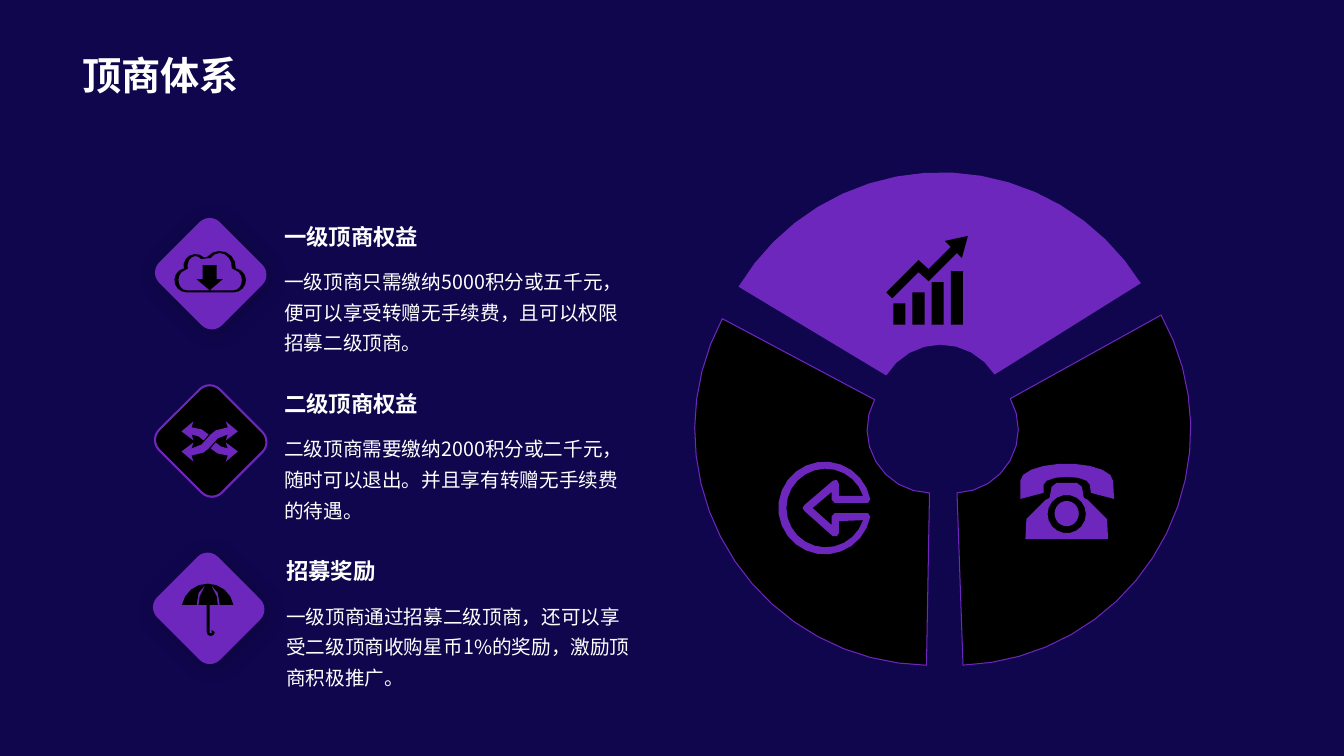
"""Build the slide on the three-part merchant system."""
from math import cos, radians, sin

from lxml.etree import SubElement
from pptx import Presentation
from pptx.dml.color import RGBColor
from pptx.enum.shapes import MSO_SHAPE
from pptx.enum.text import MSO_ANCHOR, MSO_AUTO_SIZE
from pptx.oxml.ns import qn
from pptx.util import Inches, Pt

NAVY = RGBColor(0x10, 0x06, 0x4D)
PURPLE = RGBColor(0x6D, 0x27, 0xBD)
BLACK = RGBColor(0, 0, 0)
WHITE = RGBColor(255, 255, 255)
FONT = "Noto Sans CJK JP"

deck = Presentation()
deck.slide_width, deck.slide_height = Inches(13.33), Inches(7.5)
slide = deck.slides.add_slide(deck.slide_layouts[6])
slide.background.fill.solid()
slide.background.fill.fore_color.rgb = NAVY


def arc(x, y, rx, ry, start, end, stride=20):
    """Points along an ellipse, angles counter-clockwise from the right."""
    steps = max(2, round(abs(end - start) / stride))
    angles = [radians(start + (end - start) * i / steps) for i in range(steps + 1)]
    return [(x + rx * cos(a), y - ry * sin(a)) for a in angles]


def outline(contours, colour):
    """Filled freeform in which an inner contour is a hole."""
    builder = None
    for contour in contours:
        corners = [(Inches(x), Inches(y)) for x, y in contour]
        if builder is None:
            builder = slide.shapes.build_freeform(*corners[0])
        else:
            builder.move_to(*corners[0])
        builder.add_line_segments(corners[1:], close=True)
    drawn = builder.convert_to_shape()
    drawn.shadow.inherit = False
    drawn.fill.solid()
    drawn.fill.fore_color.rgb = colour
    drawn.line.fill.background()
    return drawn


OUTER, INNER = 2.34, 0.63
for x, y, start, end, colour in [
    (9.33, 4.05, 32, 149, PURPLE),
    (9.47, 4.26, -88, 29, BLACK),
    (9.23, 4.26, 152, 269, BLACK),
]:
    rim = arc(x, y, OUTER, OUTER, start, end, 7)
    hub = arc(x, y, INNER, INNER, end, start, 15)
    sector = outline([rim + hub], colour)
    if colour == BLACK:
        sector.line.color.rgb = PURPLE
        sector.line.width = Pt(0.75)

trend = [(9.54, 2.56), (9.6, 2.34), (9.37, 2.39), (9.43, 2.45), (9.21, 2.67), (9.11, 2.58),
         (8.79, 2.9), (8.85, 2.96), (9.11, 2.7), (9.21, 2.79), (9.49, 2.51)]
outline([trend], BLACK)
BASELINE, PHONE_X = 3.22, 10.58
handset = (arc(PHONE_X, 4.77, 0.46, 0.17, 0, 180)
           + [(10.12, 4.95), (10.35, 4.89)]
           + arc(PHONE_X, 4.81, 0.23, 0.08, 180, 0, 30)
           + [(10.82, 4.89), (11.05, 4.95)])
phone_left = [(10.17, 5.35), (10.18, 5.15), (10.37, 4.96),
              (10.41, 4.94), (10.43, 4.83), (10.48, 4.79)]
phone_right = [(2 * PHONE_X - x, y) for x, y in reversed(phone_left)]
outline([handset], PURPLE)
outline([phone_left + phone_right, arc(PHONE_X, 5.1, 0.19, 0.19, 0, 360)], PURPLE)

solids = [(MSO_SHAPE.RECTANGLE, 8.86 + i * 0.19, BASELINE - height, 0.12, height, BLACK)
          for i, height in enumerate([0.21, 0.32, 0.42, 0.53])]
solids.append((MSO_SHAPE.OVAL, 10.46, 4.97, 0.24, 0.25, PURPLE))
for preset, left, top, width, height, colour in solids:
    solid = slide.shapes.add_shape(
        preset, Inches(left), Inches(top), Inches(width), Inches(height))
    solid.shadow.inherit = False
    solid.fill.solid()
    solid.fill.fore_color.rgb = colour
    solid.line.fill.background()

ring_outside = arc(8.18, 5.04, 0.46, 0.46, 11, 349, 15) + [
    (8.61, 5.09), (8.28, 5.09), (8.25, 5.12), (8.25, 5.21), (8.06, 5.04),
    (8.25, 4.88), (8.25, 4.96), (8.28, 4.99), (8.61, 4.99)]
ring_inside = arc(8.19, 5.04, 0.39, 0.39, 18, 342, 15) + [
    (8.32, 5.17), (8.32, 5.29), (8.3, 5.32), (8.26, 5.32), (7.98, 5.07), (7.96, 5.04),
    (7.98, 5.01), (8.26, 4.77), (8.3, 4.76), (8.32, 4.8), (8.32, 4.92)]
outline([ring_outside, ring_inside], PURPLE)

cloud = []
lobes = [(1.85, 2.78, 0.12, 105, 270), (2.32, 2.78, 0.12, -90, 75),
         (2.18, 2.65, 0.16, -5, 140), (1.94, 2.64, 0.12, 45, 195)]
for inset in (0, 0.04):
    cloud.append([point for x, y, r, start, end in lobes
                  for point in arc(x, y, r - inset, r - inset / 2, start, end, 25)])
cloud.append([(2.01, 2.63), (2.15, 2.63), (2.15, 2.77), (2.21, 2.77),
              (2.08, 2.88), (1.95, 2.77), (2.01, 2.77)])

strand_half = [(1.9, 4.45), (2.0, 4.41), (2.09, 4.31), (2.14, 4.27),
               (2.26, 4.24), (2.24, 4.18), (2.36, 4.28), (2.24, 4.37), (2.26, 4.31)]
strand_end = [(1.9, 4.24), (2.0, 4.26), (2.07, 4.31), (2.02, 4.37), (1.97, 4.33),
              (1.9, 4.31), (1.92, 4.37), (1.8, 4.28), (1.92, 4.18)]
turned_half, turned_end = [[(4.16 - x, 8.76 - y) for x, y in piece]
                           for piece in (strand_half, strand_end)]
shuffle = [strand_half + turned_half, strand_end, turned_end]

slit = [(1.95, 6), (1.97, 5.88), (2.04, 5.8), (1.98, 5.92), (1.97, 6)]
umbrella = [arc(2.06, 6.05, 0.26, 0.26, 11, 169), slit,
            [(4.13 - x, y) for x, y in slit],
            [(2.05, 6)] + arc(2.09, 6.27, 0.04, 0.04, 180, 360, 45)
            + [(2.1, 6.25), (2.1, 6.28), (2.08, 6.28), (2.08, 6)]]

FIRST_ROW, ROW_PITCH = 2.16, 1.66
texts = [(0.72, 0.46, 11.67, 0.57, "顶商体系", 28, True)]
benefits = [
    ("一级顶商权益", "一级顶商只需缴纳5000积分或五千元，便可以享受转赠无手续费，且可以权限招募二级顶商。",
     cloud, PURPLE, BLACK, 0),
    ("二级顶商权益", "二级顶商需要缴纳2000积分或二千元，随时可以退出。并且享有转赠无手续费的待遇。",
     shuffle, BLACK, PURPLE, 0),
    ("招募奖励", "一级顶商通过招募二级顶商，还可以享受二级顶商收购星币1%的奖励，激励顶商积极推广。",
     umbrella, PURPLE, BLACK, 0.02),
]
for row, (heading, detail, icon, tile_colour, icon_colour, shift) in enumerate(benefits):
    top = FIRST_ROW + row * ROW_PITCH
    tile = slide.shapes.add_shape(MSO_SHAPE.ROUNDED_RECTANGLE, Inches(1.65 - shift),
                                  Inches(top + 0.13), Inches(0.88), Inches(0.85))
    tile.rotation = 45
    tile.shadow.inherit = False
    tile.fill.solid()
    tile.fill.fore_color.rgb = tile_colour
    if tile_colour == BLACK:
        tile.line.color.rgb = PURPLE
        tile.line.width = Pt(1.5)
    else:
        tile.line.fill.background()
        effects = tile._element.spPr.find(qn("a:effectLst"))
        shade = SubElement(effects, qn("a:outerShdw"), blurRad=str(Pt(15)), dist=str(Pt(3)),
                           dir="2700000", algn="tl", rotWithShape="0")
        shade_colour = SubElement(shade, qn("a:srgbClr"), val=str(BLACK))
        SubElement(shade_colour, qn("a:alpha"), val="20000")
    outline(icon, icon_colour)
    texts.append((2.72 + shift, top, 3.46 - shift, 0.4, heading, 16, True))
    texts.append((2.72 + shift, top + 0.4, 3.66, 1.21, detail, 14, False))

for left, top, width, height, wording, size, bold in texts:
    frame = slide.shapes.add_textbox(
        Inches(left), Inches(top), Inches(width), Inches(height)).text_frame
    frame.word_wrap = True
    paragraph = frame.paragraphs[0]
    if bold:
        frame.auto_size = MSO_AUTO_SIZE.SHAPE_TO_FIT_TEXT
    else:
        paragraph.line_spacing = 1.3
    if size == 28:
        frame.vertical_anchor = MSO_ANCHOR.BOTTOM
    run = paragraph.add_run()
    run.text = wording
    run.font.size = Pt(size)
    run.font.bold = bold
    run.font.color.rgb = WHITE
    run.font.name = FONT
    SubElement(run.font._element, qn("a:ea"), typeface=FONT)

deck.save("out.pptx")
